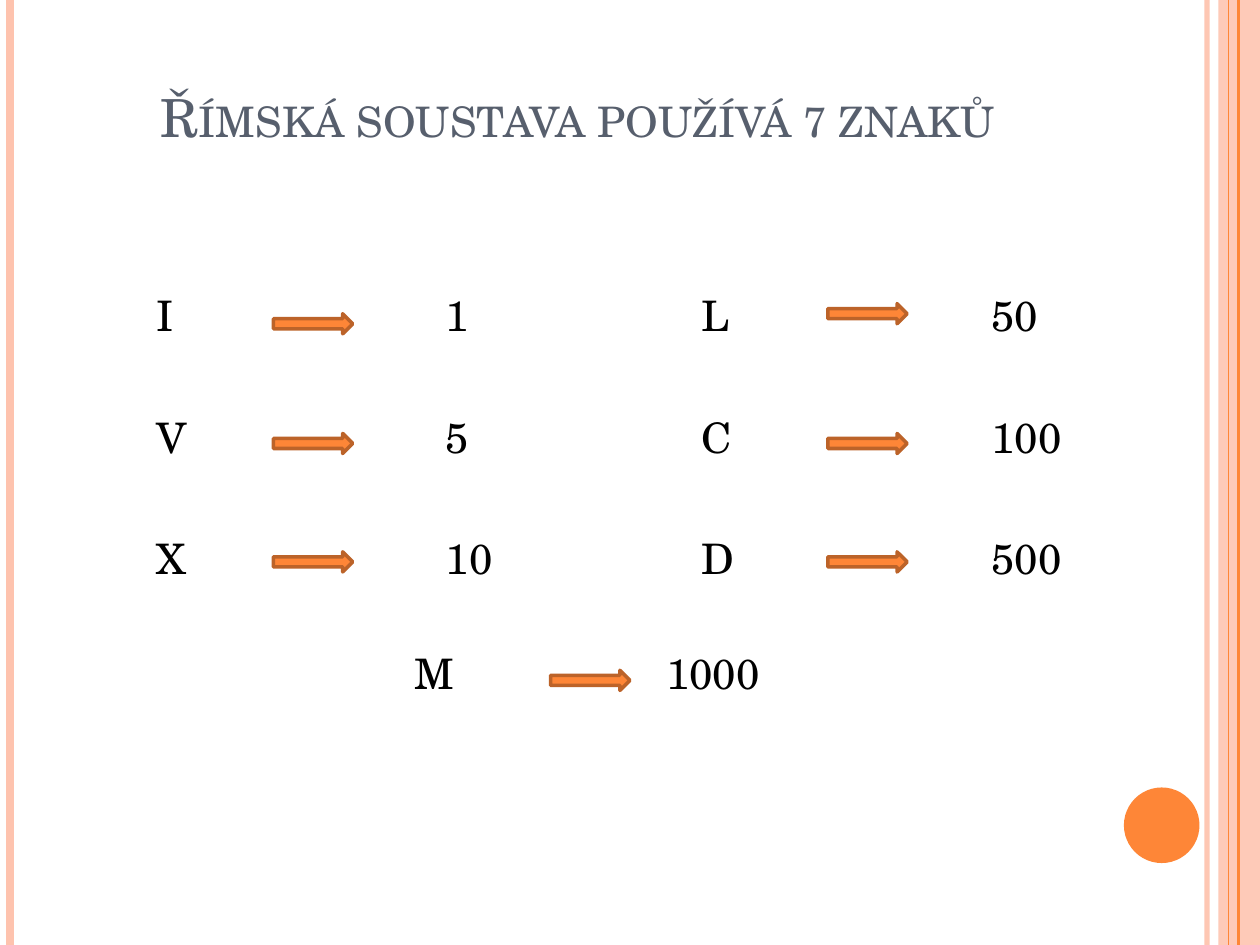
"""Build a slide listing the seven symbols of the Roman numeral system."""
from lxml.etree import SubElement
from pptx import Presentation
from pptx.dml.color import RGBColor
from pptx.enum.shapes import MSO_CONNECTOR, MSO_SHAPE
from pptx.enum.text import MSO_ANCHOR, MSO_AUTO_SIZE, PP_ALIGN
from pptx.oxml.ns import qn
from pptx.util import Inches, Pt


def color(hex_text):
    return RGBColor.from_string(hex_text)


def write(para, text, size=24, ink="000000", align=PP_ALIGN.LEFT, before=0, tab=None):
    para.alignment = align
    para.space_before = Pt(before)
    if tab:
        stops = SubElement(para._p.get_or_add_pPr(), qn("a:tabLst"))
        SubElement(stops, qn("a:tab"), pos=str(Inches(tab)), algn="l")
    span = para.add_run()
    span.text = text
    span.font.name = "TeX Gyre Schola"
    span.font.size = Pt(size)
    span.font.color.rgb = color(ink)
    return span


ORANGE, PEACH, BROWN, SLATE = "FE8637", "FEC3AE", "BC6329", "575F6D"

deck = Presentation()
deck.slide_width, deck.slide_height = Inches(10), Inches(7.5)
page = deck.slides.add_slide(deck.slide_layouts[5])

band = (MSO_SHAPE.RECTANGLE, 9.67, 0, 0.33, 7.5, PEACH, 87)
disc = (MSO_SHAPE.OVAL, 8.92, 6.25, 0.6, 0.6, ORANGE, 100)
for kind, left, top, width, height, fill, opacity in (band, disc):
    shape = page.shapes.add_shape(kind, Inches(left), Inches(top), Inches(width), Inches(height))
    shape.shadow.inherit = False
    shape.fill.solid()
    shape.fill.fore_color.rgb = color(fill)
    shape.line.fill.background()
    if opacity < 100:
        tint = shape._element.spPr.find(".//" + qn("a:srgbClr"))
        SubElement(tint, qn("a:alpha"), val=str(opacity * 1000))

for x, ink, weight, opacity in ((9.58, PEACH, 3, 93), (0.08, PEACH, 4.5, 100),
                                (9.83, ORANGE, 1.5, 100), (9.75, ORANGE, 0.75, 100)):
    stripe = page.shapes.add_connector(
        MSO_CONNECTOR.STRAIGHT, Inches(x), Inches(0), Inches(x), Inches(7.5))
    stripe.line.color.rgb = color(ink)
    stripe.line.width = Pt(weight)
    if opacity < 100:
        tint = stripe._element.spPr.find(".//" + qn("a:srgbClr"))
        SubElement(tint, qn("a:alpha"), val=str(opacity * 1000))
    SubElement(stripe._element.spPr, qn("a:effectLst"))

title = page.shapes.title
title.left, title.top = Inches(0.5), Inches(0.3)
title.width, title.height = Inches(8.17), Inches(1.25)
title.text_frame.word_wrap = True
title.text_frame.auto_size = MSO_AUTO_SIZE.NONE
title.text_frame.vertical_anchor = MSO_ANCHOR.MIDDLE
heading = write(title.text_frame.paragraphs[0], "Římská soustava používá 7 znaků",
                size=30, ink=SLATE, align=PP_ALIGN.CENTER)
heading.font._element.set("cap", "small")

columns = (
    (1.14, 2.25, 3.08, 4.62, 2.3, (("I", "1"), ("V", "5"), ("X", "10"))),
    (5.47, 2.25, 3.08, 4.62, 2.3, (("L", "50"), ("C", "100"), ("D", "500"))),
    (3.19, 5.09, 2.97, 0.5, 2, (("M", "1000"),)),
)
for left, top, width, height, tab, numerals in columns:
    box = page.shapes.add_textbox(Inches(left), Inches(top), Inches(width), Inches(height))
    frame = box.text_frame
    frame.word_wrap = True
    for row, (symbol, value) in enumerate(numerals):
        para = frame.add_paragraph() if row else frame.paragraphs[0]
        write(para, f"{symbol}\t{value}", before=40.6 if row else 0, tab=tab)

arrow_columns = ((2.17, (2.49, 3.44, 4.38)), (6.57, (2.41, 3.44, 4.38)), (4.37, (5.32,)))
for left, tops in arrow_columns:
    for top in tops:
        arrow = page.shapes.add_shape(
            MSO_SHAPE.RIGHT_ARROW, Inches(left), Inches(top), Inches(0.63), Inches(0.16))
        arrow.shadow.inherit = False
        arrow.fill.solid()
        arrow.fill.fore_color.rgb = color(ORANGE)
        arrow.line.color.rgb = color(BROWN)
        arrow.line.width = Pt(2)

deck.save("out.pptx")
